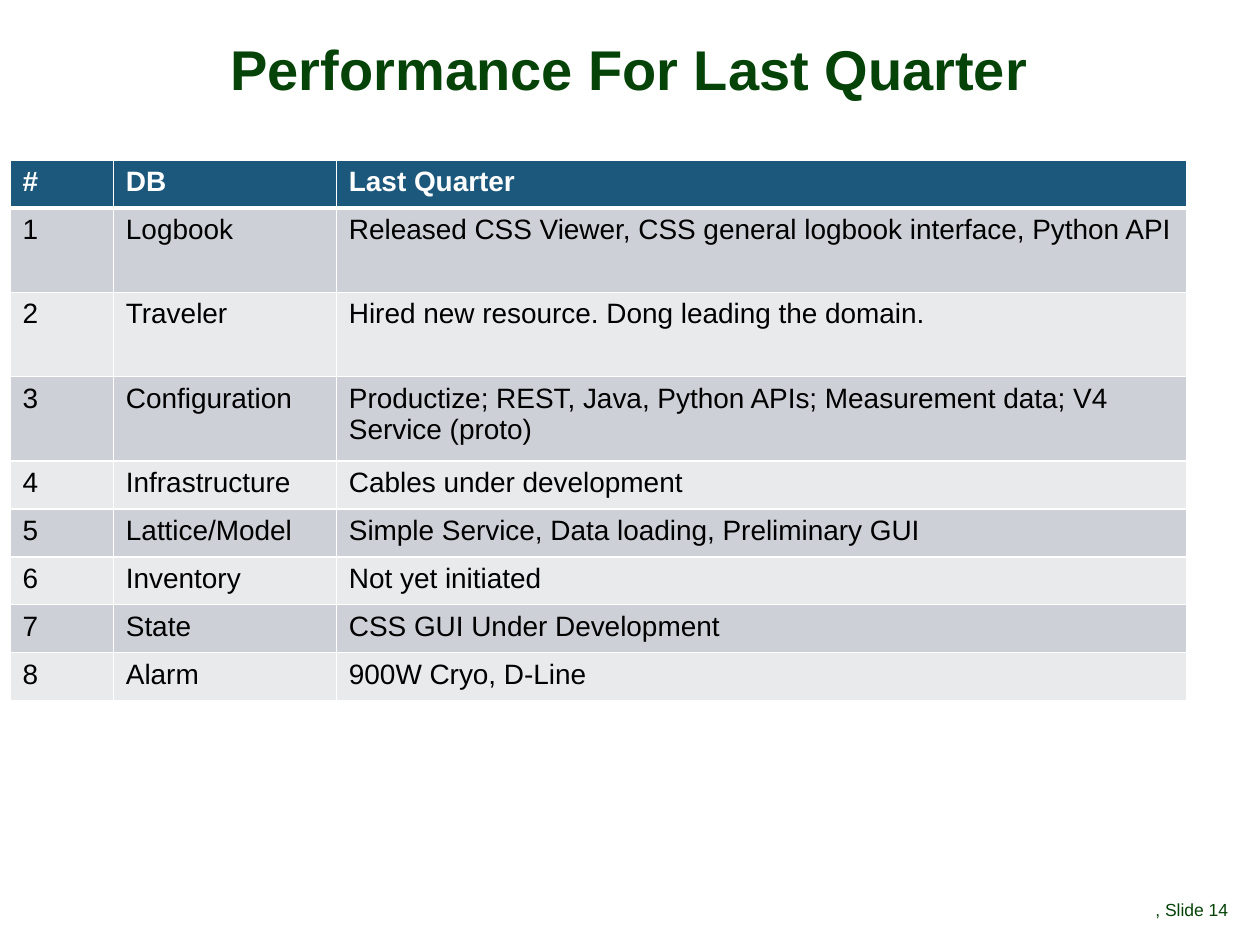
from dataclasses import dataclass

from lxml.etree import SubElement
from pptx import Presentation
from pptx.dml.color import RGBColor as Rgb
from pptx.enum.text import MSO_ANCHOR as Anchor, PP_ALIGN as Align
from pptx.oxml.ns import qn
from pptx.util import Inches, Pt

COLORS = {
    "green": "064308", "head": "1B587C", "odd": "CDD1D7",
    "even": "E8EAEC", "white": "FFFFFF", "black": "000000",
}
HEADS = ("#", "DB", "Last Quarter")
WIDTHS = (0.82, 1.77, 6.75)
LOW, TALL = 0.38, 0.67
THIN, THICK = 1, 3


@dataclass
class Row:
    name: str
    news: str
    height: float = LOW


@dataclass
class Label:
    text: str
    box: tuple[float, float, float, float]
    pads: tuple[float, float]
    anchor: Anchor
    align: Align
    spacing: float
    font: dict


ROWS = [
    Row("Logbook", "Released CSS Viewer, CSS general logbook interface, Python API", TALL),
    Row("Traveler", "Hired new resource. Dong leading the domain.", TALL),
    Row("Configuration",
        "Productize; REST, Java, Python APIs; Measurement data; V4 Service (proto)", TALL),
    Row("Infrastructure", "Cables under development"),
    Row("Lattice/Model", "Simple Service, Data loading, Preliminary GUI"),
    Row("Inventory", "Not yet initiated"),
    Row("State", "CSS GUI Under Development"),
    Row("Alarm", "900W Cryo, D-Line"),
]
LABELS = [
    Label("Performance For Last Quarter", (0.08, 0.31, 9.83, 0.53), (0.06, 0.02),
          Anchor.MIDDLE, Align.CENTER, 0.88, {"size": Pt(32), "bold": True}),
    Label(", Slide 14", (9.17, 6.95, 0.83, 0.4), (0, 0.05),
          Anchor.BOTTOM, Align.LEFT, 0.9, {"size": Pt(10), "bold": False}),
]


def set_all(item, values: dict) -> None:
    for key, value in values.items():
        setattr(item, key, value)


def style(font, color: str, values: dict) -> None:
    set_all(font, {"name": "Arial", **values})
    font.color.rgb = Rgb.from_string(COLORS[color])


def add_label(slide, label: Label) -> None:
    frame = slide.shapes.add_textbox(*map(Inches, label.box)).text_frame
    side, end = map(Inches, label.pads)
    set_all(frame, {
        "word_wrap": True, "vertical_anchor": label.anchor,
        "margin_left": side, "margin_right": side,
        "margin_top": end, "margin_bottom": end,
    })
    para = frame.paragraphs[0]
    set_all(para, {"text": label.text, "alignment": label.align,
                   "line_spacing": label.spacing})
    style(para.runs[0].font, "green", label.font)


def add_edges(cell, top: int, bottom: int) -> None:
    """Draw white borders, with top and bottom widths in points."""
    props = cell._tc.get_or_add_tcPr()
    widths = {"lnL": THIN, "lnR": THIN, "lnT": top, "lnB": bottom}
    for at, (tag, width) in enumerate(widths.items()):
        line = SubElement(props, qn(f"a:{tag}"), w=str(Pt(width)))
        fill = SubElement(line, qn("a:solidFill"))
        SubElement(fill, qn("a:srgbClr"), val=COLORS["white"])
        props.insert(at, line)


def fill_cell(cell, text: str, row: int) -> None:
    head = row == 0
    shade = "head" if head else "odd" if row % 2 else "even"
    cell.text = text
    cell.fill.solid()
    cell.fill.fore_color.rgb = Rgb.from_string(COLORS[shade])
    style(cell.text_frame.paragraphs[0].runs[0].font,
          "white" if head else "black", {"size": Pt(16), "bold": head})
    add_edges(cell, THICK if row == 1 else THIN, THICK if head else THIN)


def add_grid(slide) -> None:
    heights = [LOW, *(row.height for row in ROWS)]
    lines = [HEADS, *((str(num), row.name, row.news)
                      for num, row in enumerate(ROWS, 1))]
    table = slide.shapes.add_table(
        len(lines), len(HEADS), Inches(0.08), Inches(1.27),
        Inches(sum(WIDTHS)), Inches(sum(heights))).table
    for col, width in zip(table.columns, WIDTHS):
        col.width = Inches(width)
    for row, (height, line) in enumerate(zip(heights, lines)):
        table.rows[row].height = Inches(height)
        for col, text in enumerate(line):
            fill_cell(table.cell(row, col), text, row)


def main() -> None:
    deck = Presentation()
    set_all(deck, {"slide_width": Inches(10), "slide_height": Inches(7.5)})
    slide = deck.slides.add_slide(deck.slide_layouts[6])
    add_grid(slide)
    for label in LABELS:
        add_label(slide, label)
    deck.save("out.pptx")


if __name__ == "__main__":
    main()
